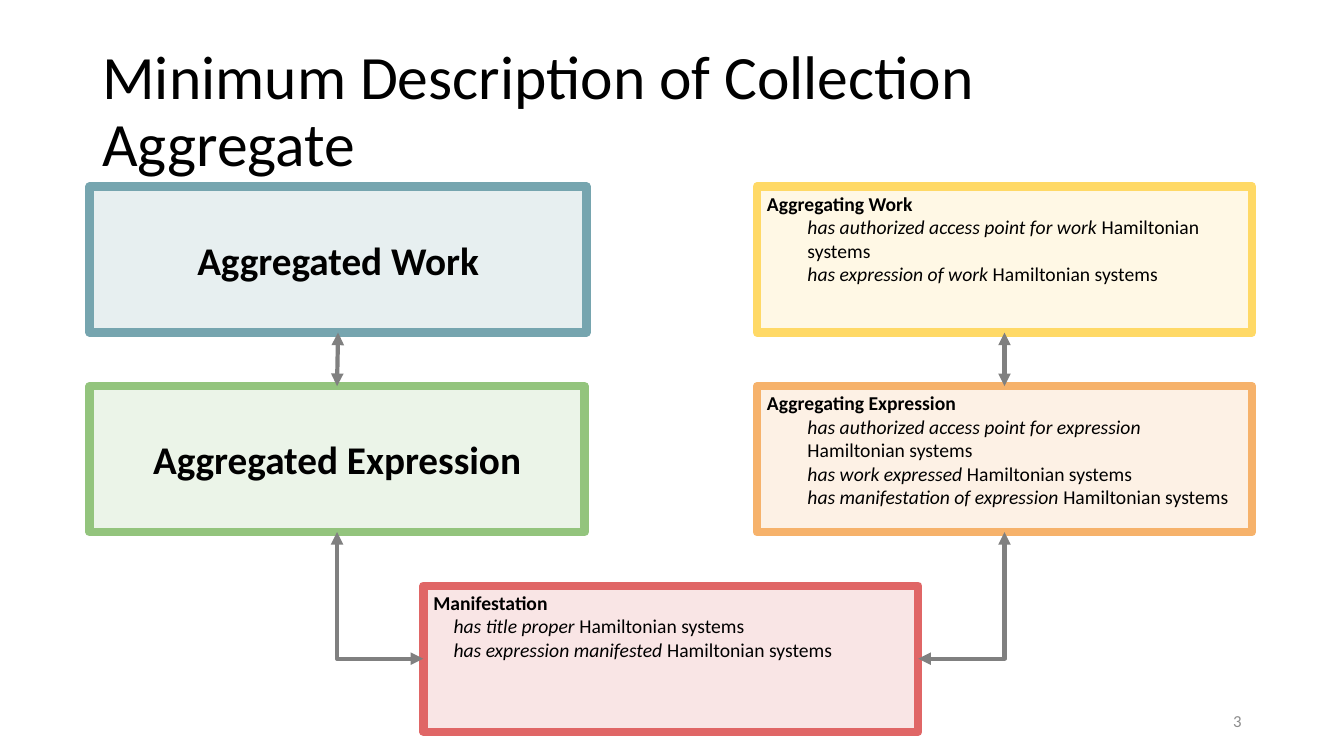
from dataclasses import dataclass

from lxml import etree
from pptx import Presentation
from pptx.dml.color import RGBColor
from pptx.enum.shapes import MSO_CONNECTOR, MSO_SHAPE
from pptx.enum.text import MSO_ANCHOR, PP_ALIGN
from pptx.oxml.ns import qn
from pptx.util import Cm, Pt

RECT = MSO_SHAPE.RECTANGLE
STRAIGHT, ELBOW = MSO_CONNECTOR.STRAIGHT, MSO_CONNECTOR.ELBOW
TOP, MIDDLE = MSO_ANCHOR.TOP, MSO_ANCHOR.MIDDLE
LEFT, CENTER, RIGHT = PP_ALIGN.LEFT, PP_ALIGN.CENTER, PP_ALIGN.RIGHT

BLACK = RGBColor(0x00, 0x00, 0x00)
ARROW_GRAY = RGBColor(0x80, 0x80, 0x80)
NUMBER_GRAY = RGBColor(0x8C, 0x8C, 0x8C)
BLUE, PALE_BLUE = RGBColor(0x76, 0xA5, 0xAF), RGBColor(0xD0, 0xE0, 0xE3)
YELLOW, PALE_YELLOW = RGBColor(0xFF, 0xD9, 0x66), RGBColor(0xFF, 0xF2, 0xCC)
GREEN, PALE_GREEN = RGBColor(0x93, 0xC4, 0x7D), RGBColor(0xD9, 0xEA, 0xD3)
ORANGE, PALE_ORANGE = RGBColor(0xF6, 0xB2, 0x6B), RGBColor(0xFC, 0xE5, 0xCD)
RED, PALE_RED = RGBColor(0xE0, 0x66, 0x66), RGBColor(0xF4, 0xCC, 0xCC)

FONT = "Calibri"
VALUE = "Hamiltonian systems"

# Grid of boxes, in centimetres
GRID_LEFT, GRID_TOP = 2.26, 4.7
COL_STEP, ROW_STEP = 8.41, 5.03
BOX_W, BOX_H = 12.47, 3.68

# Connection sites of a rectangle
SITE_TOP, SITE_LEFT, SITE_BOTTOM, SITE_RIGHT = range(4)


@dataclass
class Box:
    heading: str
    col: int
    row: int
    line: RGBColor
    fill: RGBColor
    relations: tuple[str, ...] = ()
    indent: float = 1.02
    width: float = BOX_W


@dataclass
class Link:
    start: str
    start_site: int
    end: str
    end_site: int
    bent: bool = False


BOXES = [
    Box("Aggregated Work", 0, 0, BLUE, PALE_BLUE, width=12.52),
    Box("Aggregating Work", 2, 0, YELLOW, PALE_YELLOW,
        ("has authorized access point for work", "has expression of work")),
    Box("Aggregated Expression", 0, 1, GREEN, PALE_GREEN),
    Box("Aggregating Expression", 2, 1, ORANGE, PALE_ORANGE,
        ("has authorized access point for expression", "has work expressed",
         "has manifestation of expression")),
    Box("Manifestation", 1, 2, RED, PALE_RED,
        ("has title proper", "has expression manifested"), indent=0.51),
]

LINKS = [
    Link("Manifestation", SITE_LEFT, "Aggregated Expression", SITE_BOTTOM, True),
    Link("Manifestation", SITE_RIGHT, "Aggregating Expression", SITE_BOTTOM, True),
    Link("Aggregated Work", SITE_BOTTOM, "Aggregated Expression", SITE_TOP),
    Link("Aggregating Work", SITE_BOTTOM, "Aggregating Expression", SITE_TOP),
]


def add_run(p, text: str, *, size: float, color: RGBColor = BLACK,
            bold: bool = False, italic: bool = False) -> None:
    r = p.add_run()
    r.text = text
    r.font.name, r.font.size = FONT, Pt(size)
    r.font.bold, r.font.italic = bold, italic
    r.font.color.rgb = color


def add_label(s, text: str, left: float, top: float, width: float, height: float,
              *, align=LEFT, spacing: float = 1.0, **fmt) -> None:
    tf = s.shapes.add_textbox(Cm(left), Cm(top), Cm(width), Cm(height)).text_frame
    tf.word_wrap, tf.vertical_anchor = True, MIDDLE
    p = tf.paragraphs[0]
    p.alignment, p.line_spacing = align, spacing
    add_run(p, text, **fmt)


def add_box(s, box: Box):
    sp = s.shapes.add_shape(RECT, Cm(GRID_LEFT + box.col * COL_STEP),
                            Cm(GRID_TOP + box.row * ROW_STEP),
                            Cm(box.width), Cm(BOX_H))
    sp.shadow.inherit = False
    sp.fill.solid()
    sp.fill.fore_color.rgb = box.fill
    color = sp._element.spPr.find(qn("a:solidFill")).find(qn("a:srgbClr"))
    etree.SubElement(color, qn("a:alpha"), val="50000")
    sp.line.color.rgb, sp.line.width = box.line, Pt(6)

    tf = sp.text_frame
    tf.word_wrap = True
    tf.vertical_anchor = TOP if box.relations else MIDDLE
    p = tf.paragraphs[0]
    p.alignment = LEFT if box.relations else CENTER
    add_run(p, box.heading, size=14 if box.relations else 28, bold=True)
    for relation in box.relations:
        p = tf.add_paragraph()
        p.alignment = LEFT
        p._p.get_or_add_pPr().set("marL", str(Cm(box.indent)))
        add_run(p, relation + " ", size=14, italic=True)
        add_run(p, VALUE, size=14)
    return sp


def add_link(s, link: Link, shapes: dict) -> None:
    c = s.shapes.add_connector(ELBOW if link.bent else STRAIGHT, 0, 0, 0, 0)
    c.begin_connect(shapes[link.start], link.start_site)
    c.end_connect(shapes[link.end], link.end_site)
    c.line.color.rgb, c.line.width = ARROW_GRAY, Pt(3)
    spPr = c._element.spPr
    if link.bent:  # a single corner
        spPr.find(qn("a:prstGeom")).set("prst", "bentConnector2")
    for end in ("a:headEnd", "a:tailEnd"):
        etree.SubElement(spPr.find(qn("a:ln")), qn(end), type="triangle")
    etree.SubElement(spPr, qn("a:effectLst"))


def main() -> None:
    prs = Presentation()
    prs.slide_width, prs.slide_height = Cm(33.87), Cm(19.05)
    s = prs.slides.add_slide(prs.slide_layouts[6])

    # Title and slide number
    add_label(s, "Minimum Description of Collection Aggregate",
              2.33, 1.01, 29, 3.68, size=44, spacing=0.9)
    add_label(s, "3", 23.92, 17.66, 7.62, 1.01,
              align=RIGHT, size=12, color=NUMBER_GRAY)

    # Boxes and the arrows between them
    shapes = {box.heading: add_box(s, box) for box in BOXES}
    for link in LINKS:
        add_link(s, link, shapes)

    prs.save("out.pptx")


if __name__ == "__main__":
    main()
